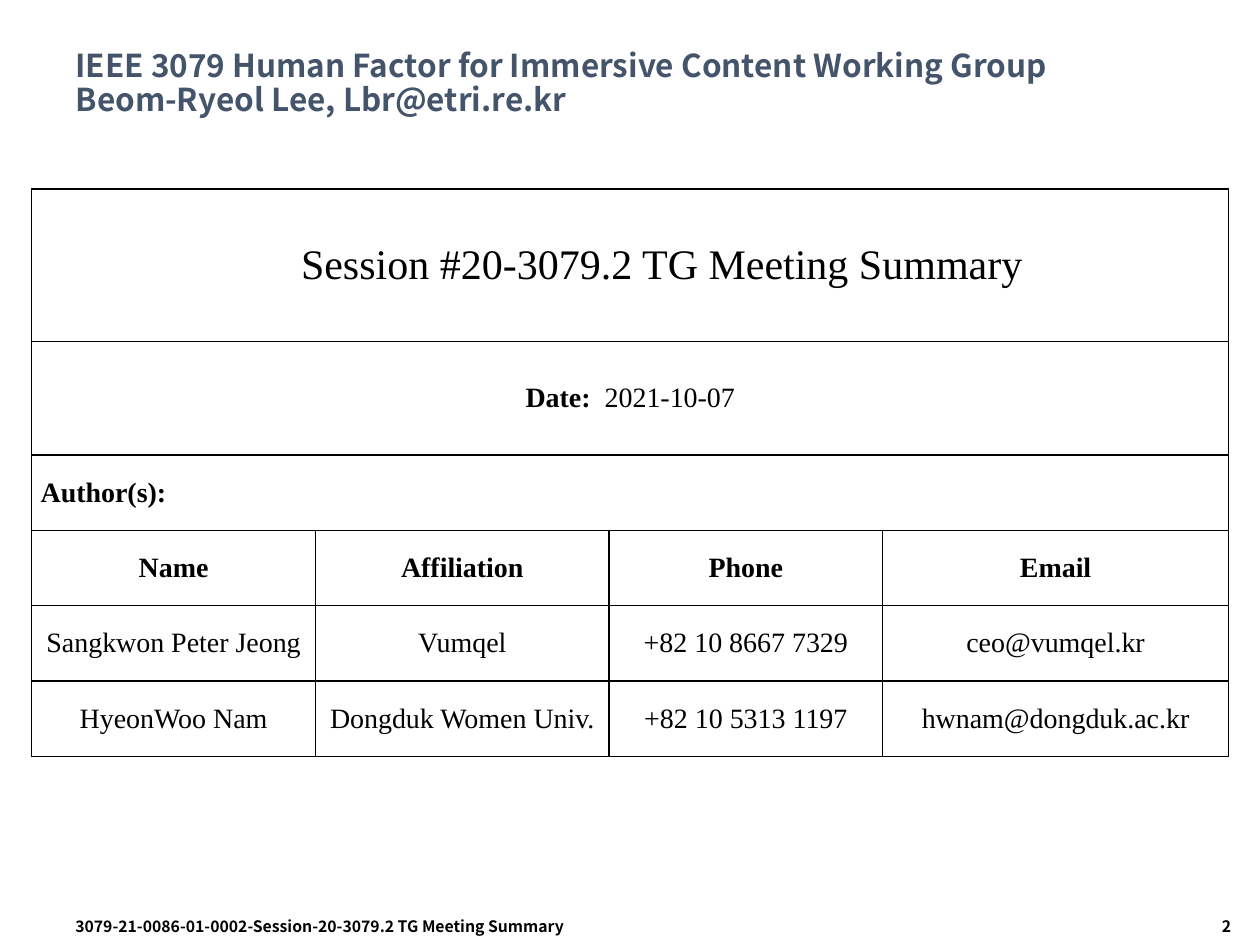
from dataclasses import dataclass

from lxml.etree import SubElement
from pptx import Presentation
from pptx.dml.color import RGBColor
from pptx.enum.text import MSO_ANCHOR as Anchor, MSO_AUTO_SIZE as AutoSize, PP_ALIGN as Align
from pptx.oxml.ns import qn
from pptx.util import Cm, Pt


@dataclass(frozen=True)
class Theme:
    heading_font: str = "Noto Sans CJK KR"
    table_font: str = "Times New Roman"
    heading: str = "44546A"
    ink: str = "000000"
    paper: str = "FFFFFF"
    title_size: int = 18
    subject_size: int = 24
    table_size: int = 16
    footer_size: int = 9
    border_width: int = 1


THEME = Theme()
TITLE_ONLY = 5
COLUMN_WIDTHS = (5.72, 5.92, 5.51, 6.98)
ROW_HEIGHTS = (3.07, 2.29, 1.52, 1.52, 1.52, 1.52)
AUTHOR_ROWS = (
    ("Name", "Affiliation", "Phone", "Email"),
    ("Sangkwon Peter Jeong", "Vumqel", "+82 10 8667 7329", "ceo@vumqel.kr"),
    ("HyeonWoo Nam", "Dongduk Women Univ.", "+82 10 5313 1197", "hwnam@dongduk.ac.kr"),
)


def format_run(run, font_name, size, color, bold):
    font = run.font
    font.name, font.size, font.bold = font_name, Pt(size), bold
    font.color.rgb = RGBColor.from_string(color)


def place(shape, left, top, width, height):
    shape.left, shape.top = Cm(left), Cm(top)
    shape.width, shape.height = Cm(width), Cm(height)


def add_title(slide, text, box):
    title = slide.shapes.title
    place(title, *box)
    frame = title.text_frame
    frame.text = text
    frame.auto_size = AutoSize.NONE
    frame.vertical_anchor = Anchor.MIDDLE
    paragraph = frame.paragraphs[0]
    paragraph.alignment = Align.LEFT
    paragraph.line_spacing = 0.9
    for run in paragraph.runs:
        format_run(run, THEME.heading_font, THEME.title_size, THEME.heading, True)


def style_cell(cell):
    properties = cell._tc.get_or_add_tcPr()
    for side in ("a:lnL", "a:lnR", "a:lnT", "a:lnB"):
        line = SubElement(properties, qn(side), w=str(Pt(THEME.border_width)))
        SubElement(SubElement(line, qn("a:solidFill")), qn("a:srgbClr"), val=THEME.ink)
    cell.fill.solid()
    cell.fill.fore_color.rgb = RGBColor.from_string(THEME.paper)
    cell.vertical_anchor = Anchor.MIDDLE
    cell.margin_left = cell.margin_right = Cm(0.18)
    cell.margin_top = cell.margin_bottom = 0


def fill_cell(cell, *parts, size=THEME.table_size, align=Align.CENTER):
    """Write (text, bold) parts into the cell's paragraph."""
    paragraph = cell.text_frame.paragraphs[0]
    paragraph.alignment = align
    for text, bold in parts:
        run = paragraph.add_run()
        run.text = text
        format_run(run, THEME.table_font, size, THEME.ink, bold)
    return paragraph


def add_summary_table(slide, left, top):
    frame = slide.shapes.add_table(
        len(ROW_HEIGHTS), len(COLUMN_WIDTHS), Cm(left), Cm(top),
        Cm(sum(COLUMN_WIDTHS)), Cm(sum(ROW_HEIGHTS)))
    table = frame.table
    table.first_row = table.horz_banding = False
    for column, width in zip(table.columns, COLUMN_WIDTHS):
        column.width = Cm(width)
    for row, height in zip(table.rows, ROW_HEIGHTS):
        row.height = Cm(height)
    for cell in table.iter_cells():
        style_cell(cell)

    # Full-width rows: subject, date and authors
    for index in range(3):
        table.cell(index, 0).merge(table.cell(index, len(COLUMN_WIDTHS) - 1))
    subject = fill_cell(table.cell(0, 0), ("Session #20-3079.2 TG Meeting Summary", False),
                        size=THEME.subject_size)
    subject._p.get_or_add_pPr().set("marL", str(Cm(1.27)))
    date = fill_cell(table.cell(1, 0), ("Date:", True), ("  2021-10-07", False))
    subject.space_after = date.space_after = Pt(12)
    fill_cell(table.cell(2, 0), ("Author(s):", True), align=Align.LEFT)

    # Author list with its header row
    for row_index, values in enumerate(AUTHOR_ROWS):
        for column_index, text in enumerate(values):
            fill_cell(table.cell(3 + row_index, column_index), (text, row_index == 0))


def add_footer_text(slide, text, box, align):
    text_box = slide.shapes.add_textbox(*map(Cm, box))
    frame = text_box.text_frame
    frame.word_wrap = True
    frame.text = text
    paragraph = frame.paragraphs[0]
    paragraph.alignment = align
    format_run(paragraph.runs[0], THEME.heading_font, THEME.footer_size, THEME.ink, True)


def main():
    presentation = Presentation()
    presentation.slide_width, presentation.slide_height = Cm(25.4), Cm(19.05)
    slide = presentation.slides.add_slide(presentation.slide_layouts[TITLE_ONLY])

    add_title(slide, "IEEE 3079 Human Factor for Immersive Content Working Group\v"
                     "Beom-Ryeol Lee, Lbr@etri.re.kr", (1.27, 0.43, 22.86, 2.54))
    add_summary_table(slide, 0.64, 3.81)
    # Footer: page number and document name
    add_footer_text(slide, "2", (20.96, 18.36, 4.11, 0.69), Align.RIGHT)
    add_footer_text(slide, "3079-21-0086-01-0002-Session-20-3079.2 TG Meeting Summary",
                    (1.27, 18.36, 12.9, 0.69), Align.LEFT)
    presentation.save("out.pptx")


if __name__ == "__main__":
    main()
